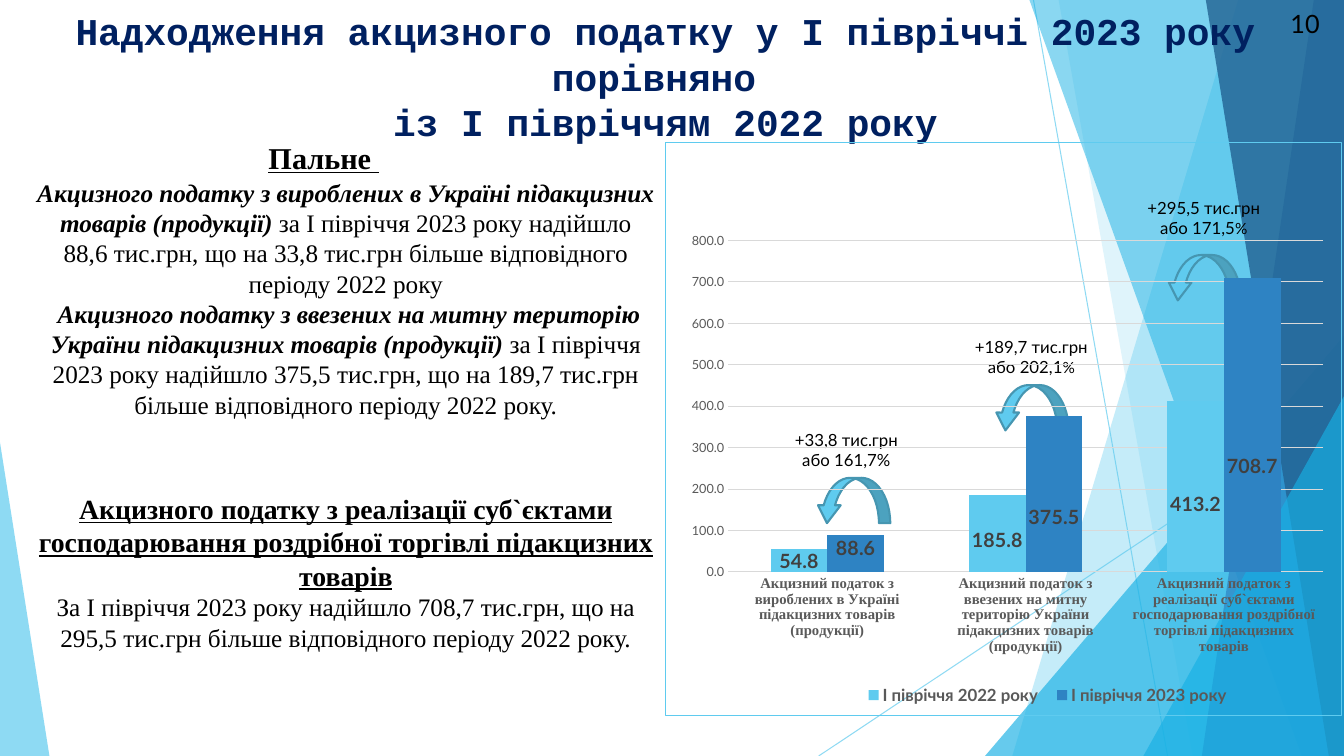
from lxml import etree
from pptx import Presentation
from pptx.chart.data import CategoryChartData
from pptx.dml.color import RGBColor
from pptx.enum.chart import XL_CHART_TYPE, XL_LABEL_POSITION, XL_LEGEND_POSITION, XL_TICK_MARK
from pptx.enum.shapes import MSO_CONNECTOR, MSO_SHAPE
from pptx.enum.text import PP_ALIGN
from pptx.oxml import parse_xml
from pptx.oxml.ns import nsdecls, qn
from pptx.util import Inches, Pt

CENTER, LEFT = PP_ALIGN.CENTER, PP_ALIGN.LEFT
COLUMN = XL_CHART_TYPE.COLUMN_CLUSTERED
BOTTOM = XL_LEGEND_POSITION.BOTTOM
LABEL_CENTER = XL_LABEL_POSITION.CENTER
NO_TICK = XL_TICK_MARK.NONE
TRIANGLE, ARROW = MSO_SHAPE.RIGHT_TRIANGLE, MSO_SHAPE.CURVED_DOWN_ARROW
STRAIGHT = MSO_CONNECTOR.STRAIGHT

COLORS = {"sky": "5FCBEF", "cyan": "17B0E4", "blue": "2E83C3", "deep": "226292",
          "navy": "002060", "black": "000000", "edge": "4696B1", "axis": "595959",
          "label": "404040", "grid": "D9D9D9"}

RAYS = [((10.25, 0), (11.58, 7.5)), ((13.33, 4.03), (8.12, 7.5))]
FACETS = [
    ([(12.28, 0), (13.33, 0), (13.33, 7.5), (10.04, 7.5)], "sky", 36),
    ([(10.5, 0), (13.33, 0), (13.33, 7.5), (11.83, 7.5)], "sky", 20),
    ([(13.33, 3.33), (13.33, 7.5), (9.77, 7.5)], "cyan", 66),
    ([(10.21, 0), (13.33, 0), (13.33, 7.5), (12.91, 7.5)], "cyan", 50),
    ([(13.03, 0), (13.33, 0), (13.33, 7.5), (11.92, 7.5)], "blue", 70),
    ([(11.96, 0), (13.33, 0), (13.33, 7.5), (13.18, 7.5)], "deep", 80),
    ([(13.33, 3.93), (13.33, 7.5), (11.34, 7.5)], "cyan", 66),
]
LEFT_FACET = (0, 4.39, 0.49, 3.11)

SERIF, MONO, SANS = "Times New Roman", "Courier New", "Lato"
HEAD = {"size": Pt(21.6), "bold": True, "underline": True}
SUBHEAD = {"size": Pt(19.8), "bold": True, "underline": True}
LEAD = {"size": Pt(18), "bold": True, "italic": True}
BODY = {"size": Pt(18)}
TITLE = {"size": Pt(27), "bold": True}
NOTE = {"size": Pt(12)}
PERCENT = {"size": Pt(11)}

TITLE_TEXT = [[("Надходження акцизного податку у І півріччі 2023 року порівняно ", TITLE)],
              [("із І півріччям 2022 року", TITLE)]]
FUEL_HEAD = [[("Пальне ", HEAD)]]
DETAILS = [
    [("Акцизного податку з вироблених в Україні підакцизних товарів (продукції)", LEAD),
     (" за І півріччя 2023 року надійшло 88,6 тис.грн, що на 33,8 тис.грн більше "
      "відповідного періоду 2022 року", BODY)],
    [(" Акцизного податку з ввезених на митну територію України підакцизних товарів "
      "(продукції)", LEAD),
     (" за І півріччя 2023 року надійшло 375,5 тис.грн, що на 189,7 тис.грн більше "
      "відповідного періоду 2022 року.", BODY)],
]
RETAIL = [
    [("Акцизного податку з реалізації суб`єктами господарювання роздрібної торгівлі "
      "підакцизних товарів", SUBHEAD)],
    [("За І півріччя 2023 року надійшло 708,7 тис.грн, що на 295,5 тис.грн більше "
      "відповідного періоду 2022 року.", BODY)],
]
GROWTH = [
    ((8.09, 4.74), (7.71, 4.21, 1.37, 0.45), [("+33,8 тис.грн або 161,7%", NOTE)]),
    ((9.86, 3.82), (9.5, 3.29, 1.46, 0.45),
     [("+189,7 тис.грн або 202,1", NOTE), ("%", PERCENT)]),
    ((11.57, 2.53), (11.21, 1.91, 1.46, 0.45),
     [("+295,5 тис.грн або 171,5", NOTE), ("%", PERCENT)]),
]
ARROW_SIZE = (0.74, 0.45)

CATEGORIES = [
    "Акцизний податок з вироблених в Україні підакцизних товарів (продукції)",
    "Акцизний податок з ввезених на митну територію України підакцизних товарів (продукції)",
    "Акцизний податок з реалізації суб`єктами господарювання роздрібної торгівлі "
    "підакцизних товарів",
]
SERIES = [
    ("І півріччя 2022 року", "sky", [54.8, 185.8, 413.2], [(0, 0), (0, 0.01), (0, 0.03)]),
    ("І півріччя 2023 року", "blue", [88.6, 375.5, 708.7], [(0, -0.01), (0, 0.04), (0, 0.07)]),
]
CHART_BOX = (6.6, 1.41, 6.71, 5.69)
PLOT_LAYOUT = {"layoutTarget": "inner", "xMode": "edge", "yMode": "edge",
               "x": 0.092, "y": 0.171, "w": 0.881, "h": 0.579}
LEGEND_LAYOUT = {"xMode": "edge", "yMode": "edge", "x": 0.28, "y": 0.94, "w": 0.57, "h": 0.05}


def rgb(name):
    return RGBColor.from_string(COLORS[name])


def box(sizes):
    return [Inches(v) for v in sizes]


def apply(target, values):
    for key, value in values.items():
        setattr(target, key, value)


def set_font(font, face, color, **values):
    apply(font, {"name": face, **values})
    font.color.rgb = rgb(color)


def set_alpha(sp, percent):
    for clr in sp._element.spPr.iter(qn("a:srgbClr")):
        etree.SubElement(clr, qn("a:alpha")).set("val", str(percent * 1000))


def paint(sp, color, percent):
    sp.shadow.inherit = False
    sp.fill.solid()
    sp.fill.fore_color.rgb = rgb(color)
    sp.line.fill.background()
    set_alpha(sp, percent)


def add_text(s, place, paragraphs, face, color="black", align=CENTER):
    tf = s.shapes.add_textbox(*box(place)).text_frame
    tf.word_wrap = True
    for i, runs in enumerate(paragraphs):
        p = tf.paragraphs[0] if i == 0 else tf.add_paragraph()
        p.alignment = align
        for text, values in runs:
            r = p.add_run()
            r.text = text
            set_font(r.font, face, color, **values)


def make_layout(values):
    layout = parse_xml(f"<c:layout {nsdecls('c')}><c:manualLayout/></c:layout>")
    for key, value in values.items():
        etree.SubElement(layout[0], qn(f"c:{key}")).set("val", str(value))
    return layout


def add_backdrop(s):
    for start, end in RAYS:
        ray = s.shapes.add_connector(STRAIGHT, *box(start + end))
        ray.line.color.rgb = rgb("sky")
        ray.line.width = Pt(0.75)
        set_alpha(ray, 70)
        etree.SubElement(ray._element.spPr, qn("a:effectLst"))
    for points, color, percent in FACETS:
        corners = [box(point) for point in points]
        builder = s.shapes.build_freeform(*corners[0])
        builder.add_line_segments(corners[1:], close=True)
        paint(builder.convert_to_shape(), color, percent)
    paint(s.shapes.add_shape(TRIANGLE, *box(LEFT_FACET)), "sky", 70)


def add_arrow(s, corner):
    sp = s.shapes.add_shape(ARROW, *box(corner + ARROW_SIZE))
    sp.shadow.inherit = False
    sp.adjustments[2] = 0.394
    sp.fill.solid()
    sp.fill.fore_color.rgb = rgb("sky")
    sp.line.color.rgb = rgb("edge")
    sp.line.width = Pt(1.5)
    sp._element.spPr.find(qn("a:xfrm")).set("flipH", "1")


def add_tax_chart(s):
    data = CategoryChartData(number_format="#,##0.0")
    data.categories = CATEGORIES
    for name, _, values, _ in SERIES:
        data.add_series(name, values)
    chart = s.shapes.add_chart(COLUMN, *box(CHART_BOX), data).chart
    set_font(chart.font, SANS, "black", size=Pt(10))
    apply(chart, {"has_title": False, "has_legend": True})
    apply(chart.legend, {"position": BOTTOM, "include_in_layout": False})
    set_font(chart.legend.font, SANS, "axis", size=Pt(12), bold=True)
    chart.legend._element.find(qn("c:legendPos")).addnext(make_layout(LEGEND_LAYOUT))
    area = chart._chartSpace.chart.plotArea
    for old in area.findall(qn("c:layout")):
        area.remove(old)
    area.insert(0, make_layout(PLOT_LAYOUT))
    chart._chartSpace.chart.addnext(parse_xml(
        f'<c:spPr {nsdecls("c", "a")}><a:noFill/><a:ln w="9525"><a:solidFill>'
        f'<a:srgbClr val="{COLORS["sky"]}"/></a:solidFill><a:prstDash val="solid"/>'
        f'<a:round/></a:ln></c:spPr>'))
    cat, val = chart.category_axis, chart.value_axis
    for axis in (cat, val):
        apply(axis, {"major_tick_mark": NO_TICK, "minor_tick_mark": NO_TICK})
        axis.format.line.fill.background()
    set_font(cat.tick_labels.font, SERIF, "axis", size=Pt(10.5), bold=True)
    set_font(val.tick_labels.font, SANS, "axis", size=Pt(9), bold=False)
    apply(val, {"minimum_scale": 0, "maximum_scale": 800, "major_unit": 100})
    apply(val.tick_labels, {"number_format": "#,##0.0", "number_format_is_linked": False})
    val.major_gridlines.format.line.color.rgb = rgb("grid")
    val.major_gridlines.format.line.width = Pt(0.75)
    plot = chart.plots[0]
    apply(plot, {"gap_width": 150, "overlap": 0, "vary_by_categories": False})
    for series, (_, color, _, offsets) in zip(plot.series, SERIES):
        series.format.fill.solid()
        series.format.fill.fore_color.rgb = rgb(color)
        for i in range(len(offsets)):
            label = series.points[i].data_label
            set_font(label.font, SANS, "label", size=Pt(14), bold=True)
            label.position = LABEL_CENTER
        for idx, (x, y) in zip(series._element.findall(f".//{qn('c:dLbl')}/{qn('c:idx')}"), offsets):
            idx.addnext(make_layout({"x": x, "y": y}))
        for leader in series._element.iter(qn("c:showLeaderLines")):
            leader.set("val", "0")


def main():
    prs = Presentation()
    prs.slide_width, prs.slide_height = box((13.33, 7.5))
    s = prs.slides.add_slide(prs.slide_layouts[6])
    add_backdrop(s)
    add_text(s, (0.27, 1.33, 5.88, 0.46), FUEL_HEAD, SERIF)
    add_text(s, (0.27, 1.71, 6.32, 2.5), DETAILS, SERIF)
    add_text(s, (0.27, 4.83, 6.32, 1.75), RETAIL, SERIF)
    for corner, _, _ in GROWTH:
        add_arrow(s, corner)
    for _, place, runs in GROWTH[:2]:
        add_text(s, place, [runs], SANS)
    add_text(s, (-0.05, 0.03, 13.3, 1.35), TITLE_TEXT, MONO, "navy")
    add_text(s, (12.7, 0.03, 0.61, 0.4), [[("10", BODY)]], SANS, align=LEFT)
    add_tax_chart(s)
    add_text(s, GROWTH[2][1], [GROWTH[2][2]], SANS)
    prs.save("out.pptx")


if __name__ == "__main__":
    main()
